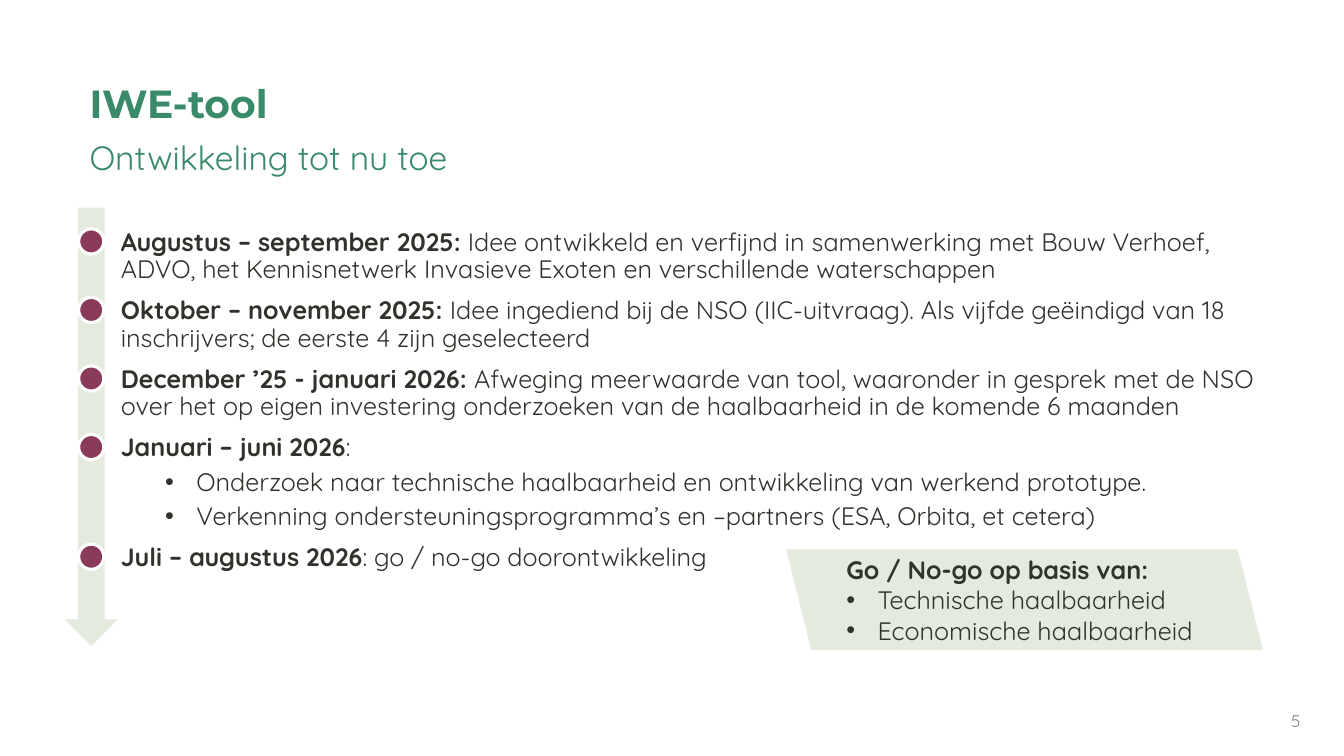
from lxml.etree import SubElement
from pptx import Presentation
from pptx.dml.color import RGBColor
from pptx.enum.shapes import MSO_SHAPE as SHAPE
from pptx.enum.text import MSO_ANCHOR as ANCHOR, PP_ALIGN as ALIGN
from pptx.oxml.ns import qn
from pptx.util import Emu, Inches, Pt

GREEN, PALE, PLUM, INK, GREY, WHITE = "388A69", "E5EADF", "8A3B59", "2F332C", "7E7E7D", "FFFFFF"
LEFT, WIDTH = 0.79, 11.76
HANG = 0.31
DOT, STEP = 0.25, 0.68
DOT_ROWS = (0, 1, 2, 3, 4.6)

MILESTONES = [
    ("Augustus – september 2025:", " Idee ontwikkeld en verfijnd in samenwerking met Bouw Verhoef, "
     "ADVO, het Kennisnetwerk Invasieve Exoten en verschillende waterschappen", []),
    ("Oktober – november 2025: ", "Idee ingediend bij de NSO (IIC-uitvraag). Als vijfde geëindigd "
     "van 18 inschrijvers; de eerste 4 zijn geselecteerd", []),
    ("December ’25 - januari 2026: ", "Afweging meerwaarde van tool, waaronder in gesprek met de NSO "
     "over het op eigen investering onderzoeken van de haalbaarheid in de komende 6 maanden", []),
    ("Januari – juni 2026", ":", [
        "Onderzoek naar technische haalbaarheid en ontwikkeling van werkend prototype.",
        "Verkenning ondersteuningsprogramma’s en –partners (ESA, Orbita, et cetera)"]),
    ("Juli – augustus 2026", ": go / no-go doorontwikkeling", []),
]
CRITERIA = ["Technische haalbaarheid", "Economische haalbaarheid"]


def rgb(value):
    """Return the colour for a hex string."""
    return RGBColor.from_string(value)


def add_text(tf, *parts, size=18, font="Quicksand", color=INK, bold=False, align=ALIGN.LEFT,
             spacing=None, before=0, margin=0, bullet=False):
    """Append a paragraph whose parts are strings or (string, bold) pairs."""
    first = not tf.paragraphs[0].runs
    p = tf.paragraphs[0] if first else tf.add_paragraph()
    pPr = p._p.get_or_add_pPr()
    pPr.set("marL", str(Inches(margin)))
    pPr.set("indent", str(Inches(-HANG if bullet else 0)))
    if bullet:
        SubElement(pPr, qn("a:buFont"), typeface="Arial")
        SubElement(pPr, qn("a:buChar"), char="•")
    p.alignment, p.line_spacing = align, spacing
    p.space_before = Pt(0 if first else before)
    for part in parts:
        text, weight = (part, bold) if isinstance(part, str) else part
        r = p.add_run()
        r.text = text
        r.font.size, r.font.name, r.font.bold = Pt(size), font, weight
        r.font.color.rgb = rgb(color)


def add_box(s, x, y, w, h, anchor=ANCHOR.TOP):
    """Add a wrapping text box and return its text frame."""
    tf = s.shapes.add_textbox(*map(Inches, (x, y, w, h))).text_frame
    tf.word_wrap, tf.vertical_anchor = True, anchor
    return tf


def add_shape(s, kind, x, y, w, h, fill, line=None):
    """Add a flat preset shape with an optional outline colour."""
    sp = s.shapes.add_shape(kind, *map(Inches, (x, y, w, h)))
    sp.shadow.inherit = False
    sp.fill.solid()
    sp.fill.fore_color.rgb = rgb(fill)
    if line:
        sp.line.color.rgb, sp.line.width = rgb(line), Pt(2.25)
    else:
        sp.line.fill.background()
    return sp


def add_heading(s, x, y, w):
    """Place the title and the subtitle below it."""
    add_text(add_box(s, x, y, w, 0.45), "IWE-tool", size=28, font="Montserrat",
             color=GREEN, bold=True, spacing=0.9)
    add_text(add_box(s, x, y + 0.56, w, 0.45), "Ontwikkeling tot nu toe", size=24,
             color=GREEN, spacing=0.9)


def add_milestones(s, x, y, w, h):
    """Place the dated milestones with their sub-bullets."""
    tf = add_box(s, x, y, w, h)
    for date, text, details in MILESTONES:
        add_text(tf, (date, True), text, spacing=0.9, before=10, margin=HANG)
        for detail in details:
            add_text(tf, detail, spacing=0.9, before=5, margin=1.06, bullet=True)


def add_timeline(s, x, y, w, h):
    """Place the downward arrow with a dot for each milestone."""
    add_shape(s, SHAPE.DOWN_ARROW, x, y, w, h, PALE)
    for row in DOT_ROWS:
        add_shape(s, SHAPE.OVAL, x + (w - DOT) / 2, y + 0.21 + row * STEP, DOT, DOT, PLUM, WHITE)


def add_decision(s, x, y, w, h):
    """Place the slanted box with the go / no-go criteria."""
    sp = add_shape(s, SHAPE.PARALLELOGRAM, x, y, w, h, PALE)
    sp._element.spPr.find(qn("a:xfrm")).set("flipH", "1")
    tf = sp.text_frame
    tf.word_wrap, tf.vertical_anchor = True, ANCHOR.MIDDLE
    add_text(tf, "Go / No-go op basis van:", bold=True)
    for criterion in CRITERIA:
        add_text(tf, criterion, margin=HANG, bullet=True)


def add_page_number(s, x, y, w, h):
    """Place the page number in the corner."""
    add_text(add_box(s, x, y, w, h, ANCHOR.MIDDLE), "5", size=12, color=GREY, align=ALIGN.RIGHT)


def main():
    """Build the slide and save it."""
    prs = Presentation()
    prs.slide_width, prs.slide_height = Emu(12192000), Inches(7.5)
    s = prs.slides.add_slide(prs.slide_layouts[6])
    add_heading(s, LEFT, 0.79, WIDTH)
    add_page_number(s, LEFT + WIDTH, 6.95, 0.45, 0.4)
    add_milestones(s, LEFT, 2.23, WIDTH, 3.92)
    add_decision(s, 7.8, 5.45, 4.73, 1)
    add_timeline(s, 0.64, 2.06, 0.53, 4.35)
    prs.save("out.pptx")


if __name__ == "__main__":
    main()
